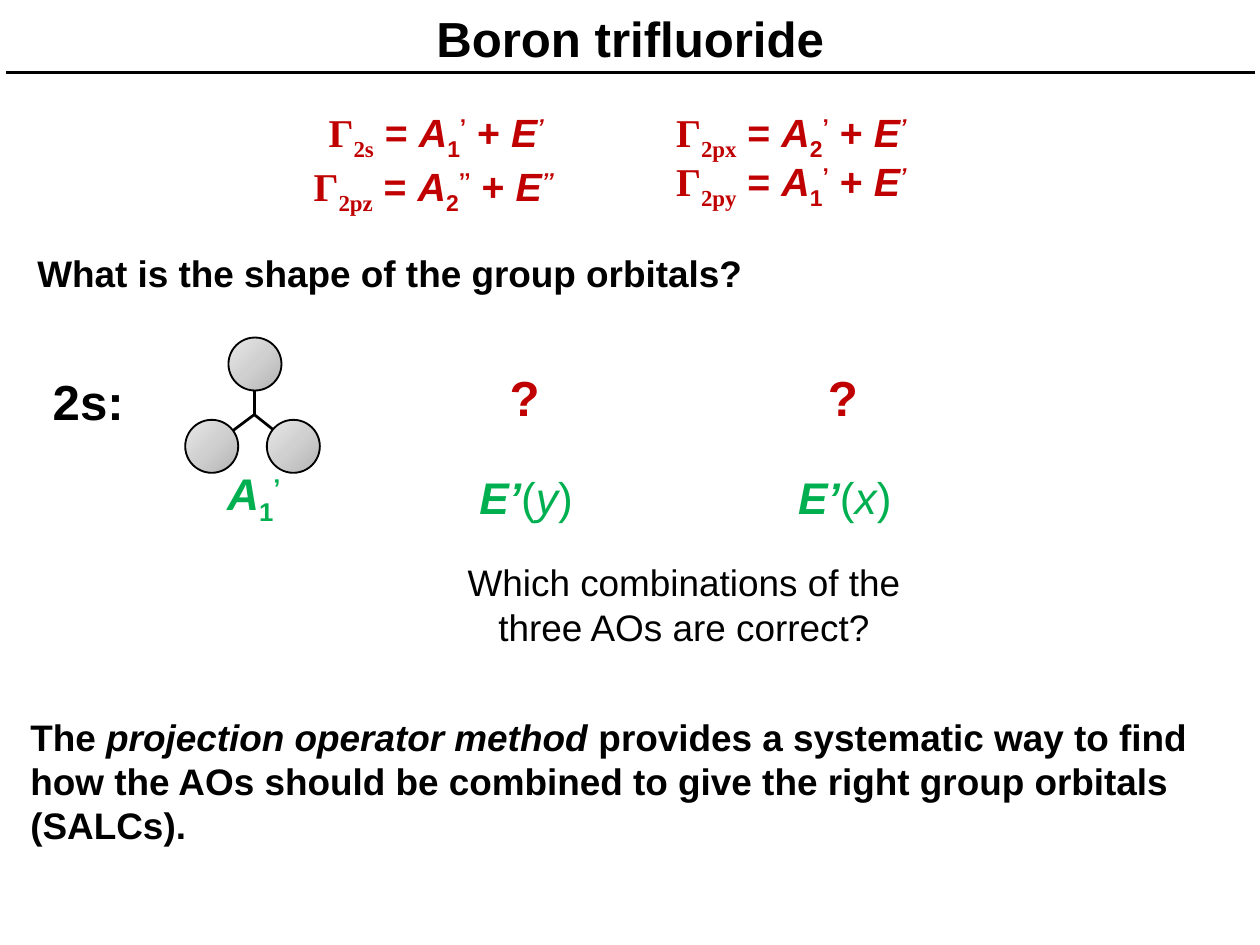
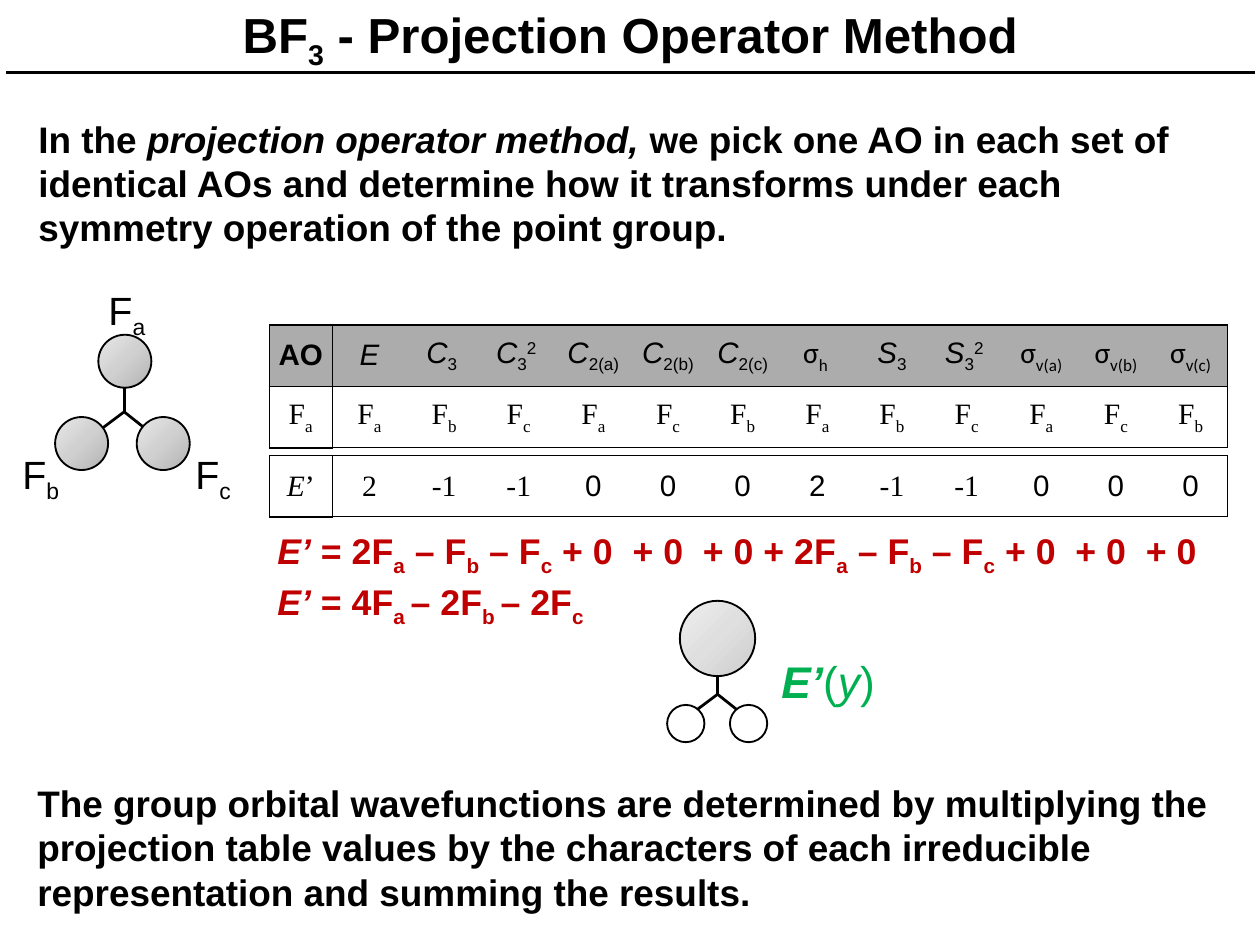
from dataclasses import dataclass
from itertools import groupby
from typing import NamedTuple

from lxml import etree
from pptx import Presentation
from pptx.dml.color import RGBColor
from pptx.enum.shapes import MSO_CONNECTOR, MSO_SHAPE
from pptx.enum.text import MSO_ANCHOR, PP_ALIGN
from pptx.oxml import parse_xml
from pptx.oxml.ns import nsdecls, qn
from pptx.util import Cm, Pt

LEFT, CENTER = PP_ALIGN.LEFT, PP_ALIGN.CENTER
TOP, MIDDLE = MSO_ANCHOR.TOP, MSO_ANCHOR.MIDDLE
OVAL, STRAIGHT = MSO_SHAPE.OVAL, MSO_CONNECTOR.STRAIGHT


# Theme: colours, faces and type sizes
@dataclass(frozen=True)
class Theme:
    black: str = "000000"
    white: str = "FFFFFF"
    red: str = "C00000"
    green: str = "00B050"
    band: str = "ACACAC"
    deep: tuple[str, ...] = ("B3B3B3", "D0D0D0", "E8E8E8")
    pale: tuple[str, ...] = ("CDCDCD", "DFDFDF", "EFEFEF")
    sans: str = "Arial"
    serif: str = "Times New Roman"
    greek: str = "Calibri"
    title: int = 40
    label: int = 36
    term: int = 32
    body: int = 30
    sum: int = 29
    cell: int = 24


T = Theme()


@dataclass(frozen=True)
class Style:
    size: int
    color: str = T.black
    bold: bool = True
    face: str = T.sans
    other: str = T.serif
    align: PP_ALIGN = LEFT
    anchor: MSO_ANCHOR = TOP
    pad: tuple[float, float] = (0.16, 0.16)


TITLE = Style(T.title, align=CENTER, anchor=MIDDLE)
HEAD = Style(T.title)
MARK = Style(T.title, T.red)
BODY = Style(T.body)
ASK = Style(T.body, bold=False, align=CENTER)
ATOM = Style(T.term, bold=False)
TERM = Style(T.term, T.red, pad=(0.25, 0.13))
SUM = Style(T.sum, T.red, pad=(0.25, 0.13))
NAME = Style(T.label, T.green, align=CENTER, anchor=MIDDLE, pad=(0, 0))
TOPROW = Style(T.cell, bold=False, other=T.greek, align=CENTER)
ROW = Style(T.cell, bold=False, face=T.serif, other=T.sans, align=CENTER)


class Label(NamedTuple):
    text: str
    style: Style
    left: float
    top: float
    width: float
    height: float = 1.78


class Ball(NamedTuple):
    dx: float
    dy: float
    size: float
    shades: tuple[str, ...] = ()


# Text marks, each switching on and off:
# ~ italic, * weight, _ subscript, ^ superscript, ` other face
MARKS = "~*_^`"


def write(para, text: str, style: Style) -> None:
    para.alignment = style.align
    on: set[str] = set()
    for mark, chars in groupby(text, lambda c: c in MARKS):
        if mark:
            for c in chars:
                on ^= {c}
            continue
        run = para.add_run()
        run.text = "".join(chars)
        font = run.font
        font.name = style.other if "`" in on else style.face
        font.size = Pt(style.size)
        font.bold = style.bold != ("*" in on)
        font.italic = "~" in on
        font.color.rgb = RGBColor.from_string(style.color)
        if "_" in on or "^" in on:
            shift = "-25000" if "_" in on else "30000"
            run._r.get_or_add_rPr().set("baseline", shift)


def put(slide, label: Label) -> None:
    box = slide.shapes.add_textbox(*(Cm(v) for v in label[2:]))
    frame, style = box.text_frame, label.style
    frame.word_wrap = True
    frame.vertical_anchor = style.anchor
    frame.margin_left = frame.margin_right = Cm(style.pad[0])
    frame.margin_top = frame.margin_bottom = Cm(style.pad[1])
    write(frame.paragraphs[0], label.text, style)


def rule(shapes, x1: float, y1: float, x2: float, y2: float, width: float) -> None:
    line = shapes.add_connector(STRAIGHT, Cm(x1), Cm(y1), Cm(x2), Cm(y2))
    line.line.color.rgb = RGBColor.from_string(T.black)
    line.line.width = Pt(width)
    etree.SubElement(line._element.spPr, qn("a:effectLst"))


# Molecules: three bonds with a ball over the end of each
BONDS = ((-1.19, 0.89), (1.12, 0.89), (0, -1.42))


def trio(shades: tuple[str, ...]) -> tuple[Ball, ...]:
    spots = ((0.02, -1.45), (-1.22, 0.91), (1.12, 0.91))
    return tuple(Ball(dx, dy, 1.52, shades) for dx, dy in spots)


EVEN = trio(T.deep)
MIXED = (Ball(0, -1.6, 2.16, T.pale), Ball(-0.91, 0.84, 1.07), Ball(0.89, 0.84, 1.07))


def shade(shape, shades: tuple[str, ...]) -> None:
    stops = "".join(
        f'<a:gs pos="{50000 * i}"><a:srgbClr val="{c}"/></a:gs>'
        for i, c in enumerate(shades)
    )
    grad = parse_xml(
        f'<a:gradFill {nsdecls("a")} rotWithShape="1"><a:gsLst>{stops}</a:gsLst>'
        '<a:path path="circle"><a:fillToRect l="100000" t="100000"/></a:path>'
        "</a:gradFill>"
    )
    shape.fill.background()
    props = shape._element.spPr
    props.replace(props.find(qn("a:noFill")), grad)


def draw(slide, x: float, y: float, balls: tuple[Ball, ...]) -> None:
    shapes = slide.shapes.add_group_shape().shapes
    for dx, dy in BONDS:
        rule(shapes, x, y, x + dx, y + dy, 2.25)
    for ball in balls:
        half = ball.size / 2
        oval = shapes.add_shape(
            OVAL, Cm(x + ball.dx - half), Cm(y + ball.dy - half),
            Cm(ball.size), Cm(ball.size),
        )
        oval.shadow.inherit = False
        oval.line.color.rgb = RGBColor.from_string(T.black)
        oval.line.width = Pt(1.5)
        if ball.shades:
            shade(oval, ball.shades)
        else:
            oval.fill.solid()
            oval.fill.fore_color.rgb = RGBColor.from_string(T.white)


# Tables
def edge(cell, side: str, width: float) -> None:
    line = etree.SubElement(cell._tc.get_or_add_tcPr(), qn(f"a:ln{side}"))
    line.set("w", str(Pt(width)))
    if width:
        fill = etree.SubElement(line, qn("a:solidFill"))
        etree.SubElement(fill, qn("a:srgbClr")).set("val", T.black)
    else:
        etree.SubElement(line, qn("a:noFill"))


def grid(slide, top: float, rows: list[tuple[Style, list[str]]]) -> None:
    count, first, wide, high = len(rows[0][1]), 1.8, 2.14, 1.76
    table = slide.shapes.add_table(
        len(rows), count, Cm(7.72), Cm(top),
        Cm(first + wide * (count - 1)), Cm(high * len(rows)),
    ).table
    table.first_row = table.horz_banding = False
    for i, col in enumerate(table.columns):
        col.width = Cm(wide if i else first)
    for r, (style, texts) in enumerate(rows):
        table.rows[r].height = Cm(high)
        for c, text in enumerate(texts):
            cell = table.cell(r, c)
            cell.vertical_anchor = MIDDLE
            cell.margin_left = cell.margin_right = Cm(0.16)
            cell.margin_top = cell.margin_bottom = Cm(0.16)
            flat = 1 if c else 1.5
            edge(cell, "L", 1 if c < 2 else 0)
            edge(cell, "R", 1 if c in (0, count - 1) else 0)
            edge(cell, "T", flat)
            edge(cell, "B", flat)
            if style is TOPROW:
                cell.fill.solid()
                cell.fill.fore_color.rgb = RGBColor.from_string(T.band)
            else:
                cell.fill.background()
            write(cell.text_frame.paragraphs[0], text, style)


# Slides
def start(deck, title: str):
    slide = deck.slides.add_slide(deck.slide_layouts[6])
    rule(slide.shapes, 0.18, 2.08, 35.97, 2.08, 3)
    put(slide, Label(title, TITLE, 0.15, 0.1, 35.84, 1.98))
    return slide


def shapes_page(deck) -> None:
    slide = start(deck, "Boron trifluoride")
    terms = (
        ("2s", "1", "’", 9.17, 2.97),
        ("2pz", "2", "’’", 8.74, 4.52),
        ("2px", "2", "’", 19.13, 2.97),
        ("2py", "1", "’", 19.13, 4.37),
    )
    for sub, num, prime, left, top in terms:
        text = f"`Γ_{sub}_` = ~A~_{num}_^{prime}^ + ~E^{prime}^~"
        put(slide, Label(text, TERM, left, top, 9.96, 1.63))
    draw(slide, 7.29, 11.89, EVEN)
    names = (("~A~_1_^’^", 2.44), ("~E’~*(~y~)", 10.24), ("~E’~*(~x~)", 19.38))
    for text, left in names:
        put(slide, Label(text, NAME, left, 12.55, 9.68, 3.38))
    for left in (14.45, 23.57):
        put(slide, Label("?", MARK, left, 10.36, 3.61))
    for label in (
        Label("What is the shape of the group orbitals?", BODY, 0.91, 7.04, 22.86),
        Label("2s:", HEAD, 1.35, 10.49, 3.61),
        Label("Which combinations of the three AOs are correct?",
              ASK, 13.16, 15.9, 12.9),
        Label("The ~projection operator method ~provides a systematic way to find "
              "how the AOs should be combined to give the right group orbitals "
              "(SALCs).", BODY, 0.71, 20.32, 35.13),
    ):
        put(slide, label)


def method_page(deck) -> None:
    slide = start(deck, "BF_3_ - Projection Operator Method")
    draw(slide, 3.56, 11.81, EVEN)
    for atom, left, top in (("a", 2.95, 8.05), ("b", 0.48, 12.75), ("c", 5.44, 12.75)):
        put(slide, Label(f"F_{atom}_", ATOM, left, top, 3.61))
    twos = [f"~C~_2({a})_" for a in "abc"]
    planes = [f"`σ_v({a})_" for a in "abc"]
    heads = ["*AO*", "~E~", "~C~_3 _", "~C~_3_^2 ^", *twos,
             "`σ_h _", "~S~_3_", "~S~_3_^2 ^", *planes]
    atoms = [f"F_{a}_" for a in "a" + "abcacb" * 2]
    zeros = ["`0"] * 3
    chars = ["~E~’", "2", "-1", "-1", *zeros, "`2", "-1", "-1", *zeros]
    grid(slide, 9.32, [(TOPROW, heads), (ROW, atoms)])
    grid(slide, 13.06, [(ROW, chars)])
    part = "2F_a_ – F_b_ – F_c_ + 0  + 0  + 0"
    for label in (
        Label("In the ~projection operator method,~ we pick one AO in each set of "
              "identical AOs and determine how it transforms under each symmetry "
              "operation of the point group.", BODY, 0.94, 3.18, 34.93),
        Label(f"~E’~ = {part} + {part}", SUM, 7.7, 15.04, 28.14, 1.5),
        Label("~E’~ = 4F_a _– 2F_b _– 2F_c_", SUM, 7.7, 16.51, 28.14, 1.5),
        Label("~E’~*(~y~)", NAME, 18.9, 17.83, 9.68, 3.38),
        Label("The group orbital wavefunctions are determined by multiplying the "
              "projection table values by the characters of each irreducible "
              "representation and summing the results.", BODY, 0.91, 22.23, 34.93),
    ):
        put(slide, label)
    draw(slide, 20.57, 19.91, MIXED)


def main() -> None:
    deck = Presentation()
    deck.slide_width, deck.slide_height = Cm(36.12), Cm(27.1)
    shapes_page(deck)
    method_page(deck)
    deck.save("out.pptx")


if __name__ == "__main__":
    main()
